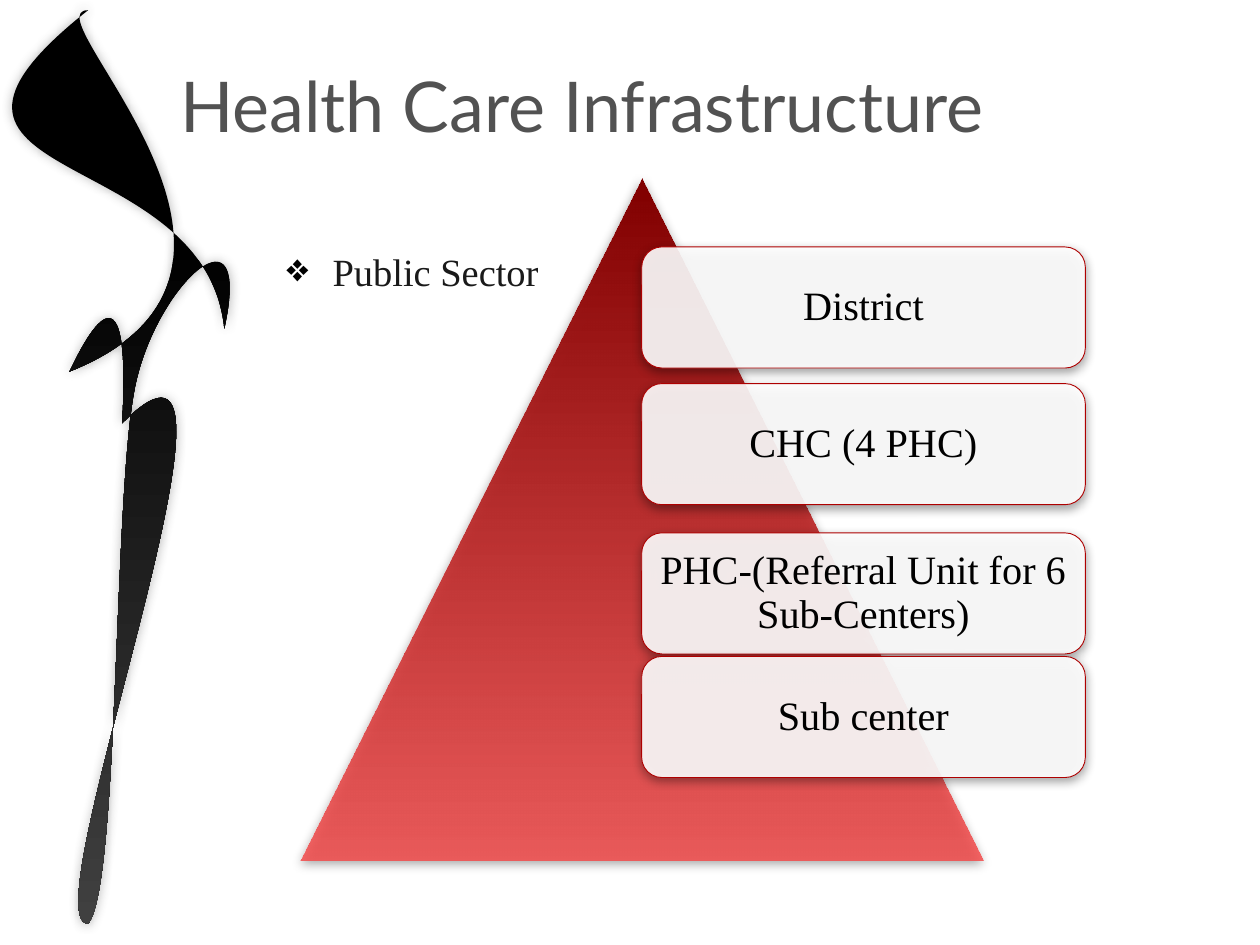
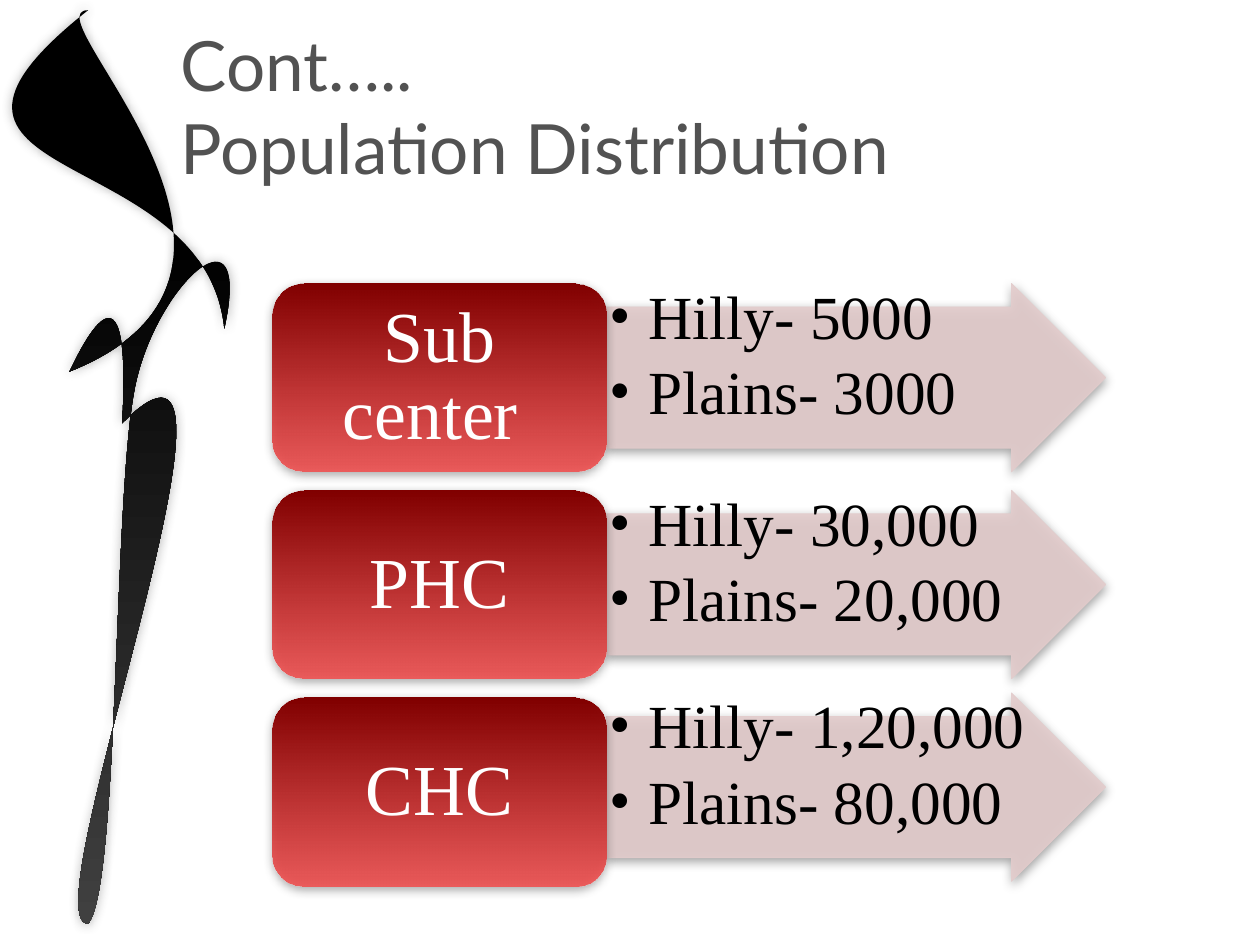
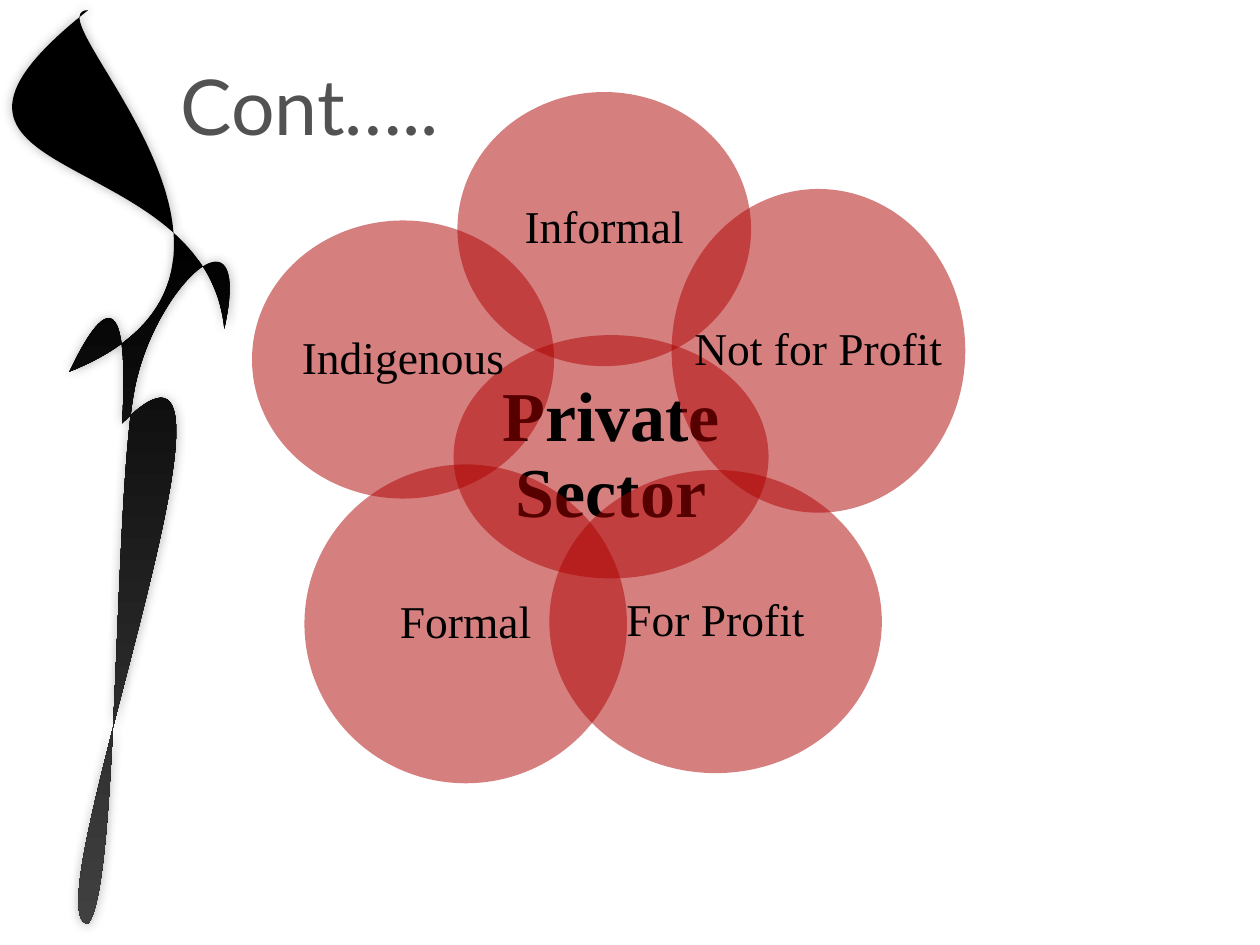
from lxml import etree
from pptx import Presentation
from pptx.dml.color import RGBColor
from pptx.enum.shapes import MSO_SHAPE
from pptx.enum.text import MSO_ANCHOR, PP_ALIGN
from pptx.oxml.ns import qn
from pptx.util import Pt

TRIANGLE = MSO_SHAPE.ISOSCELES_TRIANGLE
ROUNDED = MSO_SHAPE.ROUNDED_RECTANGLE
ARROW = MSO_SHAPE.RIGHT_ARROW
ELLIPSE = MSO_SHAPE.OVAL
TOP, MIDDLE = MSO_ANCHOR.TOP, MSO_ANCHOR.MIDDLE
LEFT, CENTER = PP_ALIGN.LEFT, PP_ALIGN.CENTER

TITLE_FONT, BODY_FONT = "Lato", "Times New Roman"
BLACK, WHITE = "000000", "FFFFFF"
TITLE_GREY, BODY_GREY, RIBBON_GREY = "525252", "1A1A1A", "404040"
RED, DARK_RED, LIGHT_RED, PINK = "AE0000", "810000", "F44C4C", "E3CCCC"

RIBBON_START = (69.8, 241.9)
RIBBON_CURVES = [
    ((76.3, 126.7), (40.3, 212.4), (39.6, 212.4)),
    ((185, 154.8), (15.1, 5.8), (50.4, 5.8)),
    ((-77.8, 107.3), (117.4, 79.9), (128.2, 187.9)),
    ((144.7, 113), (90.7, 161.3), (77.8, 218.2)),
    ((64.8, 274.3), (68.4, 506.9), (50.4, 527.8)),
    ((15.1, 527.8), (162, 149), RIBBON_START),
]

LEVELS = [
    ("District", 141.1),
    ("CHC (4 PHC)", 219.2),
    ("PHC-(Referral Unit for 6 Sub-Centers)", 304.5),
    ("Sub center", 375.1),
]
POPULATIONS = [
    ("Sub center ", 162, ["Hilly- 5000", "Plains- 3000"]),
    ("PHC", 280.2, ["Hilly- 30,000", "Plains- 20,000"]),
    ("CHC", 396, ["Hilly- 1,20,000", "Plains- 80,000"]),
]
LABEL_TOP, LABEL_PITCH, ROW_HEIGHT = 162, 118.4, 107.6
SECTORS = [
    ("Informal", (261.4, 52.6, 167.8, 156.6)),
    ("Not for Profit", (383.8, 108, 167.8, 185)),
    ("For Profit", (313.9, 268.6, 190, 173.2)),
    ("Formal", (174, 265.4, 184.3, 182.2)),
    ("Indigenous", (144, 126, 172.6, 158.9)),
]


def rgb(value):
    return RGBColor.from_string(value)


def set_alpha(fill_parent, percent):
    for color in fill_parent.iter(qn("a:srgbClr")):
        etree.SubElement(color, qn("a:alpha"), val=str(percent * 1000))


def fill_solid(shape, color, alpha):
    shape.fill.solid()
    shape.fill.fore_color.rgb = rgb(color)
    set_alpha(shape.element.spPr.find(qn("a:solidFill")), alpha)


def fill_gradient(shape, start, end, start_at=0, end_alpha=100):
    shape.fill.gradient()
    shape.fill.gradient_angle = 270
    first, last = shape.fill.gradient_stops
    first.color.rgb, last.color.rgb = rgb(start), rgb(end)
    first.position, last.position = start_at, 1
    if end_alpha < 100:
        stops = shape.element.spPr.findall(".//" + qn("a:gs"))
        set_alpha(stops[-1], end_alpha)


def fill_red(shape):
    fill_gradient(shape, DARK_RED, LIGHT_RED, end_alpha=85)


def outline(shape, color, alpha=100):
    shape.line.color.rgb = rgb(color)
    shape.line.width = Pt(0.5)
    if alpha < 100:
        set_alpha(shape.element.spPr.find(qn("a:ln")), alpha)


def add_shadow(shape, color=BLACK, distance=2):
    effects = shape.element.spPr.find(qn("a:effectLst"))
    shadow = etree.SubElement(
        effects, qn("a:outerShdw"), blurRad=str(Pt(6)), dist=str(Pt(distance)),
        dir="5400000", rotWithShape="0")
    etree.SubElement(shadow, qn("a:srgbClr"), val=color)
    set_alpha(shadow, 40)


def add_plain_shape(slide, kind, box):
    shape = slide.shapes.add_shape(kind, *map(Pt, box))
    shape.shadow.inherit = False
    shape.line.fill.background()
    return shape


def add_bullet(paragraph, symbol, indent, size):
    properties = paragraph._p.get_or_add_pPr()
    properties.set("marL", str(Pt(indent)))
    properties.set("indent", str(-Pt(indent)))
    color = etree.SubElement(properties, qn("a:buClr"))
    etree.SubElement(color, qn("a:srgbClr"), val=BLACK)
    if size < 100:
        etree.SubElement(properties, qn("a:buSzPct"), val=str(size * 1000))
    etree.SubElement(properties, qn("a:buFont"), typeface=BODY_FONT)
    etree.SubElement(properties, qn("a:buChar"), char=symbol)


def write(shape, lines, size, color=BLACK, font=BODY_FONT, align=CENTER,
          anchor=MIDDLE, insets=(0, 0), spacing=0.9, after=0, bold=False,
          bullet=None, wrap=True):
    frame = shape.text_frame
    frame.word_wrap = wrap
    frame.vertical_anchor = anchor
    frame.margin_left = frame.margin_right = Pt(insets[0])
    frame.margin_top = frame.margin_bottom = Pt(insets[1])
    for index, line in enumerate(lines):
        paragraph = frame.add_paragraph() if index else frame.paragraphs[0]
        paragraph.text = line
        if bullet:
            add_bullet(paragraph, *bullet)
        paragraph.alignment = align
        paragraph.line_spacing = spacing
        paragraph.space_after = Pt(after)
        paragraph.font.name = font
        paragraph.font.size = Pt(size)
        paragraph.font.bold = bold
        paragraph.font.color.rgb = rgb(color)


def add_text(slide, box, lines, size, **style):
    write(slide.shapes.add_textbox(*map(Pt, box)), lines, size, **style)


def bend_segments(freeform):
    segments = list(freeform.element.spPr.iter(qn("a:lnTo")))
    for first, second, third in zip(segments[::3], segments[1::3], segments[2::3]):
        curve = etree.Element(qn("a:cubicBezTo"))
        first.addprevious(curve)
        for segment in (first, second, third):
            curve.append(segment[0])
            segment.getparent().remove(segment)


def add_ribbon(slide):
    builder = slide.shapes.build_freeform(*map(Pt, RIBBON_START))
    corners = [tuple(map(Pt, point)) for curve in RIBBON_CURVES for point in curve]
    builder.add_line_segments(corners, close=True)
    ribbon = builder.convert_to_shape()
    bend_segments(ribbon)
    ribbon.shadow.inherit = False
    ribbon.line.fill.background()
    fill_gradient(ribbon, BLACK, RIBBON_GREY, start_at=0.25)
    add_shadow(ribbon, RIBBON_GREY, distance=0)


def add_titled_slide(deck, title, size):
    slide = deck.slides.add_slide(deck.slide_layouts[6])
    add_ribbon(slide)
    add_text(slide, (96, 6, 536, 108), [title], size, color=TITLE_GREY,
             font=TITLE_FONT, align=LEFT, insets=(7.2, 3.6), spacing=1.0)
    return slide


def add_level(slide, name, top):
    level = add_plain_shape(slide, ROUNDED, (366.7, top, 253.5, 69.2))
    fill_solid(level, WHITE, 90)
    outline(level, RED)
    add_shadow(level)
    write(level, [name], 23, insets=(5, 5))


def add_population(slide, label_top, name, arrow_top, counts):
    arrow_box = (346.5, arrow_top, 285.3, ROW_HEIGHT)
    arrow = add_plain_shape(slide, ARROW, arrow_box)
    arrow.adjustments[0], arrow.adjustments[1] = 0.75, 0.5
    fill_solid(arrow, PINK, 90)
    outline(arrow, PINK, 90)
    add_shadow(arrow)
    add_text(slide, arrow_box, counts, 35, align=LEFT, anchor=TOP,
             insets=(1.6, 1.6), after=5.3, bullet=("•", 22.5, 100))
    label = add_plain_shape(slide, ROUNDED, (156, label_top, 190.3, ROW_HEIGHT))
    fill_red(label)
    add_shadow(label)
    write(label, [name], 41, color=WHITE, insets=(12, 6))


def add_sector(slide, name, box, size=26, **style):
    sector = add_plain_shape(slide, ELLIPSE, box)
    fill_solid(sector, RED, 50)
    write(sector, [name], size, **style)


def build_infrastructure(deck):
    slide = add_titled_slide(deck, "Health Care Infrastructure", 40)
    add_text(slide, (156, 138, 476, 344), ["Public Sector"], 22, color=BODY_GREY,
             align=LEFT, anchor=TOP, insets=(7.2, 3.6), spacing=1.0,
             bullet=("❖", 27, 80))
    pyramid = add_plain_shape(slide, TRIANGLE, (172, 102, 390, 390))
    fill_red(pyramid)
    add_shadow(pyramid)
    for name, top in LEVELS:
        add_level(slide, name, top)


def build_population(deck):
    slide = add_titled_slide(deck, "Cont…..\vPopulation Distribution", 39.6)
    for row, (name, arrow_top, counts) in enumerate(POPULATIONS):
        add_population(slide, LABEL_TOP + row * LABEL_PITCH, name, arrow_top, counts)


def build_private_sector(deck):
    slide = add_titled_slide(deck, "Cont…..", 44)
    add_sector(slide, "Private Sector", (259.2, 191.5, 180, 139), 40, bold=True)
    for name, box in SECTORS:
        add_sector(slide, name, box, wrap=False)


def main():
    deck = Presentation()
    deck.slide_width, deck.slide_height = Pt(720), Pt(540)
    build_infrastructure(deck)
    build_population(deck)
    build_private_sector(deck)
    deck.save("out.pptx")


if __name__ == "__main__":
    main()
